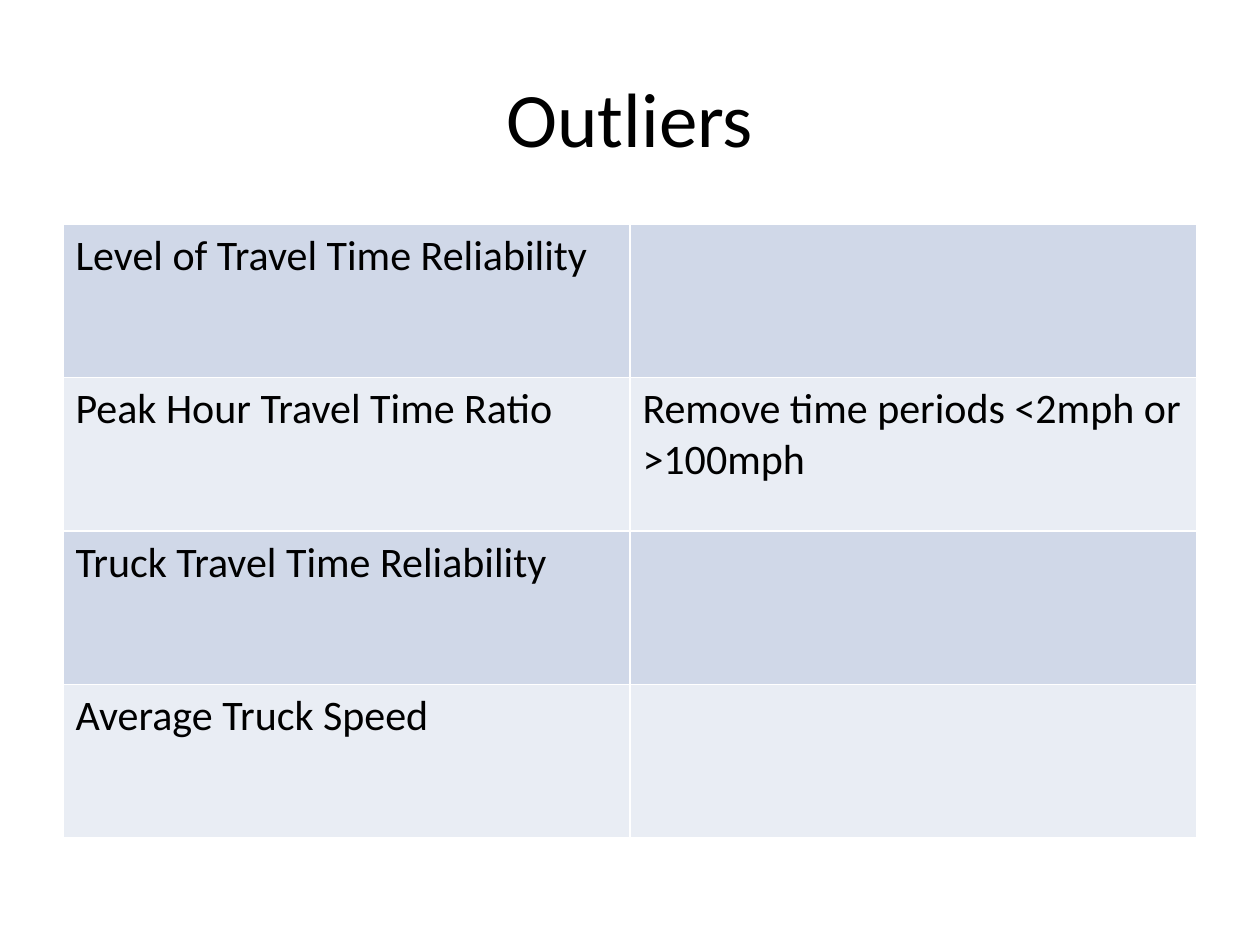
from pptx import Presentation
from pptx import util as u
from pptx.dml.color import RGBColor
from pptx.enum import text
from pptx.oxml import parse_xml
from pptx.oxml.ns import nsdecls

BLACK = RGBColor(0x00, 0x00, 0x00)
WHITE = RGBColor(0xFF, 0xFF, 0xFF)
BANDS = (RGBColor(0xD0, 0xD8, 0xE8), RGBColor(0xE9, 0xED, 0xF4))

WIDTH, HEIGHT = u.Inches(10), u.Inches(7.5)
MARGIN = 0.05
TITLE_FONT = {"name": "Calibri", "size": u.Pt(44)}
CELL_FONT = {"name": "Calibri", "size": u.Pt(24)}

MEASURES = [
    ("Level of Travel Time Reliability", ""),
    ("Peak Hour Travel Time Ratio", "Remove time periods <2mph or >100mph"),
    ("Truck Travel Time Reliability", ""),
    ("Average Truck Speed", ""),
]


def box(left, top, width, height):
    return (int(WIDTH * left), int(HEIGHT * top),
            int(WIDTH * width), int(HEIGHT * height))


def write(p, words, fmt):
    r = p.add_run()
    r.text = words
    for name, value in fmt.items():
        setattr(r.font, name, value)
    r.font.color.rgb = BLACK


def add_title(s, words):
    sp = s.shapes.add_textbox(*box(MARGIN, 0.04, 1 - 2 * MARGIN, 1 / 6))
    tf = sp.text_frame
    tf.word_wrap = True
    tf.vertical_anchor = text.MSO_ANCHOR.MIDDLE
    p = tf.paragraphs[0]
    p.alignment = text.PP_ALIGN.CENTER
    write(p, words, TITLE_FONT)


def set_borders(cell):
    tc_pr = cell._tc.get_or_add_tcPr()
    for i, side in enumerate(("lnL", "lnR", "lnT", "lnB")):
        tc_pr.insert(i, parse_xml(
            f'<a:{side} {nsdecls("a")} w="{u.Pt(1)}"><a:solidFill>'
            f'<a:srgbClr val="{WHITE}"/></a:solidFill></a:{side}>'))


def add_measures(s, rows):
    frame = s.shapes.add_table(len(rows), len(rows[0]),
                               *box(MARGIN, 0.237, 1 - 2 * MARGIN, 0.65))
    table = frame.table
    table.first_row = False
    for i, row in enumerate(rows):
        for j, words in enumerate(row):
            cell = table.cell(i, j)
            cell.fill.solid()
            cell.fill.fore_color.rgb = BANDS[i % 2]
            set_borders(cell)
            if words:
                write(cell.text_frame.paragraphs[0], words, CELL_FONT)


def main():
    prs = Presentation()
    prs.slide_width, prs.slide_height = WIDTH, HEIGHT
    s = prs.slides.add_slide(prs.slide_layouts[6])
    add_title(s, "Outliers")
    add_measures(s, MEASURES)
    prs.save("out.pptx")


if __name__ == "__main__":
    main()
